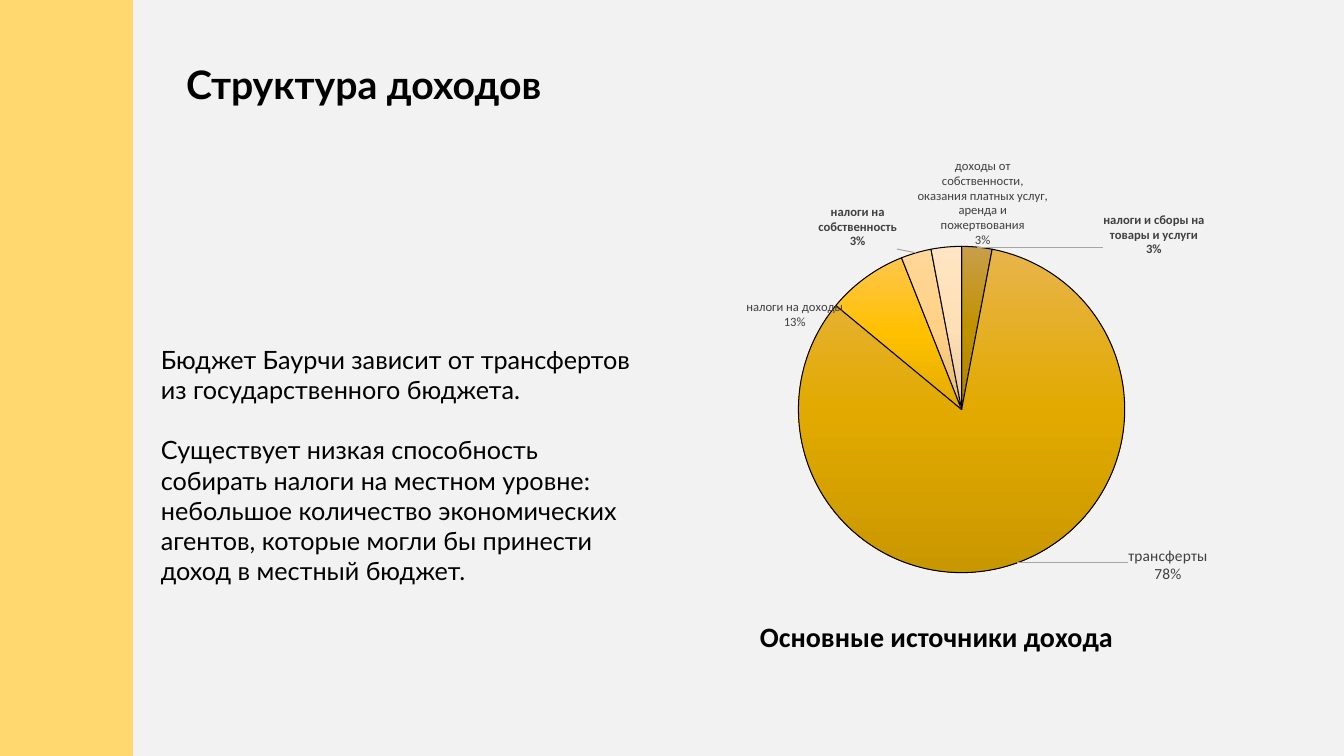
from dataclasses import dataclass

from pptx import Presentation, util as u
from pptx.chart.data import CategoryChartData
from pptx.dml.color import RGBColor
from pptx.enum import chart as ch, shapes, text
from pptx.oxml import parse_xml
from pptx.oxml.ns import nsdecls, qn

PX = 914400 / 100.8
C15 = "http://schemas.microsoft.com/office/drawing/2012/chart"


@dataclass(frozen=True)
class Theme:
    back: str = "F2F2F2"
    bar: str = "FFD96F"
    ink: str = "000000"
    label: str = "404040"
    lead: str = "A6A6A6"
    head: str = "Lato"
    data: str = "Calibri"
    title: int = 28
    body: int = 18
    cap: int = 20
    chart: int = 10
    small: int = 9
    large: int = 11


T = Theme()

BODY = [
    "Бюджет Баурчи зависит от трансфертов из государственного бюджета.",
    "Существует низкая способность собирать налоги на местном уровне: "
    "небольшое количество экономических агентов, которые могли бы принести "
    "доход в местный бюджет.",
]

# category, value, gradient, label shift, fixed percent, label size
SLICES = [
    ("налоги и сборы на товары и услуги", 3,
     ("C99E4B", "C19200", "AC8100"), (0.39, -0.09), None, T.small),
    ("трансферты", 83,
     ("E8B44B", "E2AA00", "C99700"), (0.33, 0.06), "78%", T.large),
    ("налоги на доходы", 8,
     ("FFC64B", "FFC000", "E3AB00"), (-0.21, 0.04), "13%", T.small),
    ("налоги на собственность", 3,
     ("FFD798", "FFD187", "E5BA75"), (-0.17, -0.12), None, T.small),
    ("доходы от собственности, оказания платных услуг, аренда и пожертвования",
     3, ("FFE5C3", "FFE0B6", "E5C79F"), (-0.05, -0.21), "3%", T.small),
]


def rgb(code):
    return RGBColor.from_string(code)


def box(*sides):
    return [u.Emu(round(s * PX)) for s in sides]


def style(font, name, size, color=T.ink, bold=False):
    font.name, font.size, font.bold = name, u.Pt(size), bold
    font.color.rgb = rgb(color)


def write(shape, lines, name, size, bold=False, gap=0):
    frame = shape.text_frame
    frame.word_wrap = True
    frame.text = "\n".join(lines)
    for i, para in enumerate(frame.paragraphs):
        style(para.font, name, size, bold=bold)
        para.alignment = text.PP_ALIGN.LEFT
        para.space_before = u.Pt(gap if i else 0)


def add_bar(slide):
    bar = slide.shapes.add_shape(
        shapes.MSO_SHAPE.RECTANGLE, *box(0, 0, 133, 756))
    bar.shadow.inherit = False
    bar.fill.solid()
    bar.fill.fore_color.rgb = rgb(T.bar)
    bar.line.fill.background()


def add_title(slide, words):
    title = slide.shapes.title
    title.left, title.top, title.width, title.height = box(176, 55, 1066, 57)
    write(title, [words], T.head, T.title, bold=True)
    title.text_frame.vertical_anchor = text.MSO_ANCHOR.MIDDLE


def node(tag, inner="", attrs=""):
    return parse_xml(f'<{tag} {nsdecls("c", "a")} {attrs}>{inner}</{tag}>')


def layout(inner):
    return node("c:layout", f"<c:manualLayout>{inner}</c:manualLayout>")


def place(x, y):
    return f'<c:x val="{x}"/><c:y val="{y}"/>'


def span(w, h):
    return f'<c:w val="{w}"/><c:h val="{h}"/>'


def show(labels):
    """Turn on category and percent, on separate lines, for a label element."""
    for tag, val in (("showVal", 0), ("showCatName", 1), ("showPercent", 1)):
        labels.find(qn("c:" + tag)).set("val", str(val))
    labels.find(qn("c:showBubbleSize")).addnext(node("c:separator", "\n"))


def narrow(label, w, h):
    """Fix the size of a label, so that its text wraps inside it."""
    label.append(node(
        "c:extLst",
        '<c:ext uri="{CE6537A1-D6FC-4f65-9D91-7224C49458BB}">'
        f'<c15:layout xmlns:c15="{C15}"><c:manualLayout>{span(w, h)}'
        "</c:manualLayout></c15:layout></c:ext>"))


def add_label(point, name, percent, size):
    label = point.data_label
    if percent:
        frame = label.text_frame
        frame.text = f"{name}\n{percent}"
        for para in frame.paragraphs:
            style(para.runs[0].font, T.data, size, T.label)
    else:
        style(label.font, T.data, size, T.label, bold=True)
    label.position = ch.XL_LABEL_POSITION.INSIDE_END


def add_pie(slide):
    data = CategoryChartData()
    data.categories = [s[0] for s in SLICES]
    data.add_series("Series 1", [s[1] for s in SLICES])
    chart = slide.shapes.add_chart(
        ch.XL_CHART_TYPE.PIE, *box(713, 157, 585, 447), data).chart
    chart.has_title = chart.has_legend = False
    style(chart.font, T.data, T.chart)
    plot = chart.plots[0]
    plot.vary_by_categories = True
    series = plot.series[0]

    labels = series.data_labels
    style(labels.font, T.data, T.small, T.label, bold=True)
    labels.number_format, labels.number_format_is_linked = "0%", False
    labels.position = ch.XL_LABEL_POSITION.INSIDE_END
    for i, (name, _, _, _, percent, size) in enumerate(SLICES):
        point = series.points[i]
        point.format.line.color.rgb = rgb(T.ink)
        point.format.line.width = u.Pt(0.75)
        add_label(point, name, percent, size)
    finish(chart.element)


def finish(root):
    """Add gradients, label shifts, leader lines and the plot position."""
    for props, piece in zip(root.xpath(".//c:dPt/c:spPr"), SLICES):
        stops = "".join(
            f'<a:gs pos="{i * 50000}"><a:srgbClr val="{c}"/></a:gs>'
            for i, c in enumerate(piece[2]))
        props.insert(0, node(
            "a:gradFill",
            f'<a:gsLst>{stops}</a:gsLst><a:lin ang="5400000" scaled="0"/>'))

    tags = root.xpath(".//c:dLbl")
    for label, piece in zip(tags, SLICES):
        shift = layout(place(*piece[3]))
        label.find(qn("c:idx")).addnext(shift)
        if not piece[4]:
            shift.addnext(node(
                "c:numFmt", attrs='formatCode="0%" sourceLinked="0"'))
        show(label)
    narrow(tags[-1], 0.19, 0.2)
    for body in root.xpath(".//c:ser//a:bodyPr"):
        body.set("wrap", "square")

    group = root.xpath(".//c:ser/c:dLbls")[0]
    show(group)
    for old in group.findall(qn("c:showLeaderLines")):
        group.remove(old)
    group.append(node("c:showLeaderLines", attrs='val="1"'))
    group.append(node(
        "c:leaderLines",
        '<c:spPr><a:ln w="9525"><a:solidFill>'
        f'<a:srgbClr val="{T.lead}"/></a:solidFill></a:ln></c:spPr>'))

    area = root.xpath(".//c:plotArea")[0]
    for old in area.findall(qn("c:layout")):
        area.remove(old)
    area.insert(0, layout(
        '<c:layoutTarget val="inner"/><c:xMode val="edge"/>'
        '<c:yMode val="edge"/>' + place(0.14, 0.2) + span(0.57, 0.73)))


def main():
    deck = Presentation()
    deck.slide_width, deck.slide_height = box(1344, 756)
    slide = deck.slides.add_slide(deck.slide_layouts[5])
    slide.background.fill.solid()
    slide.background.fill.fore_color.rgb = rgb(T.back)
    add_bar(slide)
    add_title(slide, "Структура доходов")
    add = slide.shapes.add_textbox
    write(add(*box(151, 339, 507, 254)), BODY, T.head, T.body, gap=21.6)
    write(add(*box(750, 615, 471, 44)), ["Основные источники дохода"],
          T.data, T.cap, bold=True)
    add_pie(slide)
    deck.save("out.pptx")


if __name__ == "__main__":
    main()
